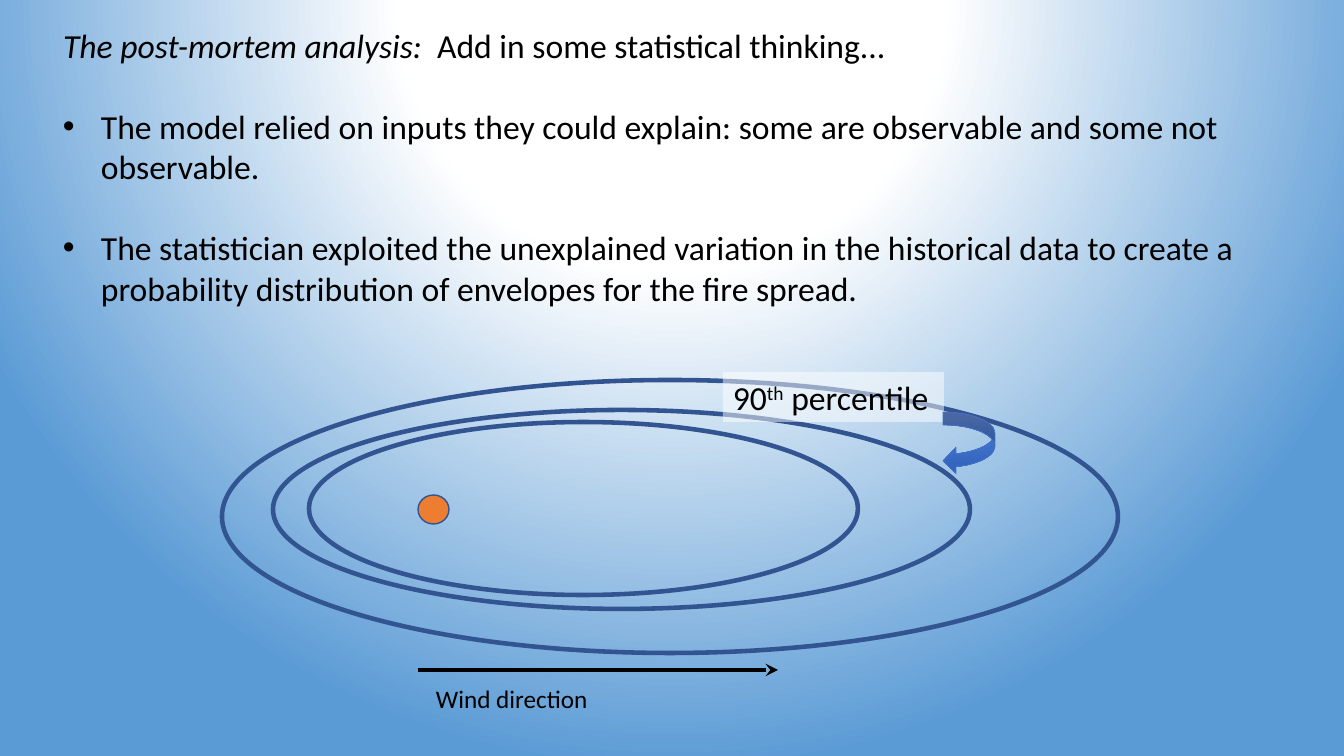
from pptx import Presentation
from pptx.util import Emu, Pt
from pptx.dml.color import RGBColor
from pptx.enum.shapes import MSO_SHAPE, MSO_CONNECTOR
from pptx.enum.text import MSO_ANCHOR, MSO_AUTO_SIZE, PP_ALIGN
from pptx.oxml import parse_xml
from pptx.oxml.ns import nsdecls, qn
from lxml.etree import SubElement

THEME = {
    "font": "Calibri", "text": "000000", "outline": "325491",
    "fire": "ED7D31", "label": "FFFFFF", "arrow_line": "4472C4",
    "sky": [(0, "FFFFFF"), (35, "FFFFFF"), (100, "5B9BD5")],
    "arrow": [(0, "6183CB"), (50, "3E70CA"), (100, "3062BB")],
    "body": 24, "caption": 18,
}


def px(*values):
    return [Emu(round(v * 12192000 / 1344)) for v in values]


def set_gradient(fill, parent, stops, shade):
    """Fill with any number of (percent, colour) stops and an a:lin or a:path shade."""
    fill.gradient()
    old = next(parent.iter(qn("a:gradFill")))
    gs = "".join(f'<a:gs pos="{pos * 1000}"><a:srgbClr val="{c}"/></a:gs>'
                 for pos, c in stops)
    new = parse_xml(f'<a:gradFill {nsdecls("a")} rotWithShape="1">'
                    f'<a:gsLst>{gs}</a:gsLst>{shade}</a:gradFill>')
    old.getparent().replace(old, new)


rgb = RGBColor.from_string
prs = Presentation()
prs.slide_width, prs.slide_height = px(1344, 756)
s = prs.slides.add_slide(prs.slide_layouts[5])
set_gradient(s.background.fill, s.element, THEME["sky"],
             '<a:path path="circle"><a:fillToRect l="50000" t="-80000" '
             'r="50000" b="180000"/></a:path>')

# Title and bullets
title = s.shapes.title
title.left, title.top, title.width, title.height = px(53, 20, 1255, 50)
body = s.shapes.add_textbox(*px(53, 101, 1255, 212))
bullets = [
    "The model relied on inputs they could explain: some are observable "
    "and some not observable.",
    "The statistician exploited the unexplained variation in the historical data "
    "to create a probability distribution of envelopes for the fire spread.",
]
indent = px(38)[0]
for i, text in enumerate(bullets):
    tf = body.text_frame
    p = tf.add_paragraph() if i else tf.paragraphs[0]
    pPr = p._p.get_or_add_pPr()
    pPr.set("marL", str(indent))
    pPr.set("indent", str(-indent))
    SubElement(pPr, qn("a:buFont"), typeface="Arial")
    SubElement(pPr, qn("a:buChar"), char="•")
    p.add_run().text = text
    if i:
        p.space_before = Pt(29)

# Fire envelopes around the ignition point
envelopes = [(222, 380, 896, 273), (309, 422, 549, 173), (273, 410, 697, 199)]
ignition = (418, 495, 31, 29)
for box in envelopes + [ignition]:
    sp = s.shapes.add_shape(MSO_SHAPE.OVAL, *px(*box))
    sp.shadow.inherit = False
    sp.line.color.rgb = rgb(THEME["outline"])
    if box == ignition:
        sp.fill.solid()
        sp.fill.fore_color.rgb = rgb(THEME["fire"])
        sp.line.width = Pt(1)
    else:
        sp.fill.background()
        sp.line.width = Pt(3.25)

# Wind arrow
wind = s.shapes.add_connector(MSO_CONNECTOR.STRAIGHT, *px(418, 670, 778, 670))
wind.line.color.rgb = rgb(THEME["text"])
wind.line.width = Pt(3)
SubElement(wind.line._get_or_add_ln(), qn("a:tailEnd"), type="stealth")
SubElement(wind._element.spPr, qn("a:effectLst"))

# Percentile label and its pointer
label = s.shapes.add_textbox(*px(723, 372, 221, 50))
label.fill.solid()
label.fill.fore_color.rgb = rgb(THEME["label"])
SubElement(next(label._element.spPr.iter(qn("a:srgbClr"))), qn("a:alpha"), val="50000")

pointer = s.shapes.add_shape(MSO_SHAPE.CURVED_LEFT_ARROW, *px(943, 412, 52, 62))
pointer.shadow.inherit = False
set_gradient(pointer.fill, pointer._element.spPr, THEME["arrow"],
             '<a:lin ang="5400000" scaled="0"/>')
pointer.line.color.rgb = rgb(THEME["arrow_line"])
pointer.line.width = Pt(0.5)

caption = s.shapes.add_textbox(*px(426, 678, 173, 40))

# Runs of the one-line texts
lines = [
    (title, ["The post-mortem analysis:  ", "Add in some statistical thinking..."]),
    (label, ["90", "th", " percentile"]),
    (caption, ["Wind direction"]),
]
for sp, runs in lines:
    for text in runs:
        sp.text_frame.paragraphs[0].add_run().text = text
title.text_frame.paragraphs[0].runs[0].font.italic = True
label.text_frame.paragraphs[0].runs[1].font._element.set("baseline", "30000")

# Shared text format
for sp, size, wrap in [(title, "body", True), (body, "body", True),
                       (label, "body", False), (caption, "caption", False)]:
    tf = sp.text_frame
    frame_format = {"word_wrap": wrap, "auto_size": MSO_AUTO_SIZE.NONE,
                    "vertical_anchor": MSO_ANCHOR.TOP}
    for name, value in frame_format.items():
        setattr(tf, name, value)
    for p in tf.paragraphs:
        p.alignment = PP_ALIGN.LEFT
        for r in p.runs:
            for name, value in {"name": THEME["font"], "size": Pt(THEME[size])}.items():
                setattr(r.font, name, value)
            r.font.color.rgb = rgb(THEME["text"])

prs.save("out.pptx")
